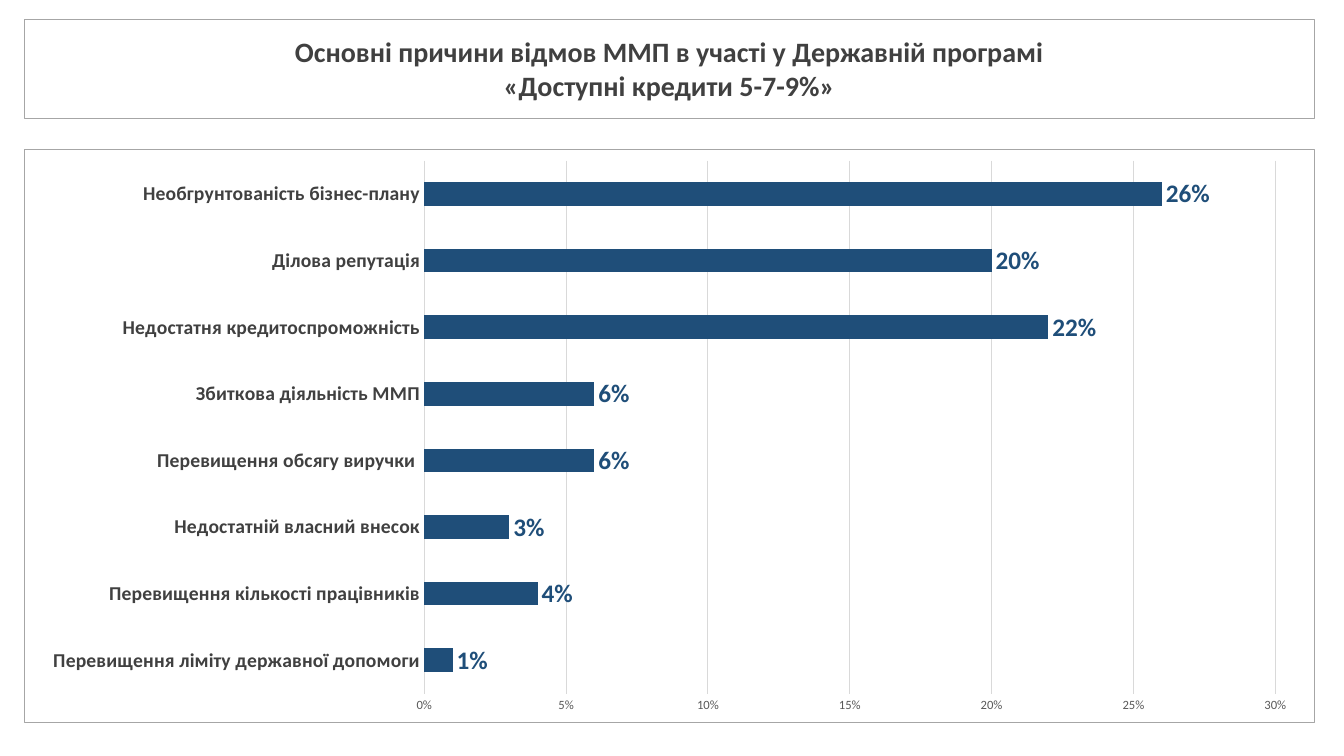
from dataclasses import dataclass

from pptx import Presentation
from pptx import util as u
from pptx.chart.data import CategoryChartData
from pptx.dml.color import RGBColor
from pptx.enum import chart as charts, text
from pptx.oxml import parse_xml
from pptx.oxml.ns import nsdecls


@dataclass(frozen=True)
class Theme:
    face: str = "Calibri"
    ink: str = "404040"
    scale_ink: str = "595959"
    bar: str = "1F4E79"
    grid: str = "D9D9D9"
    frame: str = "A6A6A6"
    title_size: int = 20
    value_size: int = 18
    reason_size: int = 14
    scale_size: int = 9
    frame_width: float = 0.5
    grid_width: float = 0.75


THEME = Theme()
WIDTH, HEIGHT = u.Inches(13.33), u.Inches(7.5)
MARGIN, CONTENT_WIDTH = 0.018, 0.96  # shares of the slide's width
TITLE_TOP, TITLE_HEIGHT = 0.025, 0.131  # shares of the slide's height
CHART_TOP, CHART_HEIGHT = 0.197, 0.759
PLOT = {"x": 0.31, "y": 0.02, "w": 0.66, "h": 0.93}  # shares of the chart

TITLE = (
    "Основні причини відмов ММП в участі у Державній програмі",
    "«Доступні кредити 5-7-9%»",
)
REFUSALS = {
    "Перевищення ліміту державної допомоги": 0.01,
    "Перевищення кількості працівників": 0.04,
    "Недостатній власний внесок": 0.03,
    "Перевищення обсягу виручки ": 0.06,
    "Збиткова діяльність ММП": 0.06,
    "Недостатня кредитоспроможність": 0.22,
    "Ділова репутація": 0.2,
    "Необгрунтованість бізнес-плану": 0.26,
}


def band(top, height):
    """Left, top, width and height of a full-width band of the slide."""
    return (int(WIDTH * MARGIN), int(HEIGHT * top),
            int(WIDTH * CONTENT_WIDTH), int(HEIGHT * height))


def style_font(font, size, color, bold=False):
    font.name, font.size, font.bold = THEME.face, u.Pt(size), bold
    font.color.rgb = RGBColor.from_string(color)


def style_line(line, color, width):
    line.color.rgb = RGBColor.from_string(color)
    line.width = u.Pt(width)


def fill_title(title):
    title.left, title.top, title.width, title.height = band(TITLE_TOP, TITLE_HEIGHT)
    style_line(title.line, THEME.frame, THEME.frame_width)
    frame = title.text_frame
    frame.text = "\n".join(TITLE)
    frame.word_wrap = True
    frame.auto_size = text.MSO_AUTO_SIZE.NONE
    frame.vertical_anchor = text.MSO_ANCHOR.MIDDLE
    for paragraph in frame.paragraphs:
        paragraph.alignment = text.PP_ALIGN.CENTER
        style_font(paragraph.font, THEME.title_size, THEME.ink, bold=True)


def frame_chart(chart):
    """Outline the chart area."""
    chart.element.chart.addnext(parse_xml(
        f'<c:spPr {nsdecls("c", "a")}><a:noFill/>'
        f'<a:ln w="{u.Pt(THEME.frame_width)}"><a:solidFill>'
        f'<a:srgbClr val="{THEME.frame}"/></a:solidFill></a:ln></c:spPr>'))


def place_plot(chart):
    """Fix the inner plot area within the chart."""
    plot_area = chart.element.chart.plotArea
    for layout in plot_area.findall("c:layout", plot_area.nsmap):
        plot_area.remove(layout)
    modes = '<c:xMode val="edge"/><c:yMode val="edge"/>'
    shares = "".join(f'<c:{side} val="{share}"/>' for side, share in PLOT.items())
    plot_area.insert(0, parse_xml(
        f'<c:layout {nsdecls("c")}><c:manualLayout><c:layoutTarget val="inner"/>'
        f'{modes}{shares}</c:manualLayout></c:layout>'))


def style_axes(chart):
    reasons, scale = chart.category_axis, chart.value_axis
    for axis in (reasons, scale):
        axis.major_tick_mark = axis.minor_tick_mark = charts.XL_TICK_MARK.NONE
    reasons.has_major_gridlines = False
    style_font(reasons.tick_labels.font, THEME.reason_size, THEME.ink, bold=True)
    style_line(reasons.format.line, THEME.grid, THEME.grid_width)

    scale.minimum_scale, scale.maximum_scale, scale.major_unit = 0, 0.3, 0.05
    scale.has_major_gridlines = True
    style_line(scale.major_gridlines.format.line, THEME.grid, THEME.grid_width)
    scale.format.line.fill.background()
    style_font(scale.tick_labels.font, THEME.scale_size, THEME.scale_ink)
    scale.tick_labels.number_format = "0%"
    scale.tick_labels.number_format_is_linked = False


def style_bars(plot):
    plot.gap_width = 182
    plot.vary_by_categories = False
    bars = plot.series[0]
    bars.format.fill.solid()
    bars.format.fill.fore_color.rgb = RGBColor.from_string(THEME.bar)
    labels = bars.data_labels
    labels.show_value = True
    labels.position = charts.XL_LABEL_POSITION.OUTSIDE_END
    labels.number_format, labels.number_format_is_linked = "0%", False
    style_font(labels.font, THEME.value_size, THEME.bar, bold=True)


def add_refusal_chart(slide):
    refusals = CategoryChartData(number_format="0%")
    refusals.categories = list(REFUSALS)
    refusals.add_series("Series 1", list(REFUSALS.values()))
    chart = slide.shapes.add_chart(
        charts.XL_CHART_TYPE.BAR_CLUSTERED,
        *band(CHART_TOP, CHART_HEIGHT), refusals).chart
    chart.has_title = chart.has_legend = False
    chart.font.name, chart.font.size = THEME.face, u.Pt(10)
    frame_chart(chart)
    place_plot(chart)
    style_axes(chart)
    style_bars(chart.plots[0])


def main():
    deck = Presentation()
    deck.slide_width, deck.slide_height = WIDTH, HEIGHT
    slide = deck.slides.add_slide(deck.slide_layouts.get_by_name("Title Only"))
    fill_title(slide.shapes.title)
    add_refusal_chart(slide)
    deck.save("out.pptx")


if __name__ == "__main__":
    main()
